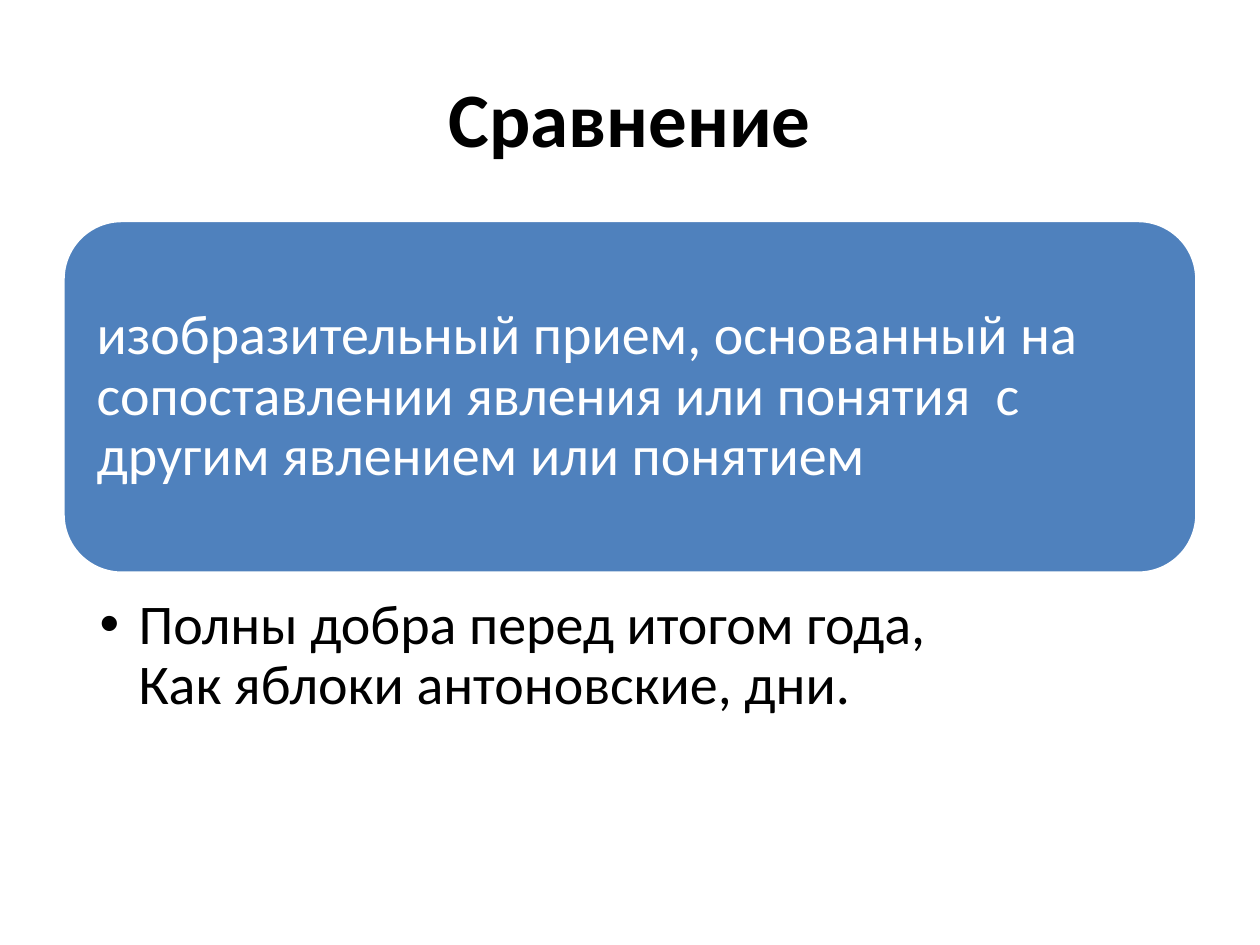
from dataclasses import dataclass

from lxml import etree
from pptx import Presentation
from pptx.dml.color import RGBColor
from pptx.enum.shapes import MSO_SHAPE
from pptx.enum.text import MSO_ANCHOR, PP_ALIGN
from pptx.oxml.ns import qn
from pptx.util import Inches, Pt

BLACK = RGBColor(0x00, 0x00, 0x00)
WHITE = RGBColor(0xFF, 0xFF, 0xFF)
BLUE = RGBColor(0x4F, 0x81, 0xBD)
FONT = "Calibri"
ROUNDED = MSO_SHAPE.ROUNDED_RECTANGLE
MIDDLE, TOP = MSO_ANCHOR.MIDDLE, MSO_ANCHOR.TOP
LEFT, CENTER = PP_ALIGN.LEFT, PP_ALIGN.CENTER

MARGIN, CONTENT_WIDTH = 0.5, 9
BULLET_INDENT = 0.31


@dataclass(frozen=True)
class TextStyle:
    size: int
    color: RGBColor
    bold: bool = False
    align: PP_ALIGN = LEFT
    anchor: MSO_ANCHOR = TOP
    line_spacing: float = 0.9
    insets: tuple[float, float, float, float] = (0.1, 0.05, 0.1, 0.05)


TITLE = TextStyle(44, BLACK, bold=True, align=CENTER, anchor=MIDDLE, line_spacing=1.0)
DEFINITION = TextStyle(32, WHITE, anchor=MIDDLE, insets=(0.13, 0.13, 0.13, 0.13))
EXAMPLE = TextStyle(32, BLACK, insets=(0.29, 0.04, 0.25, 0.04))


def place(shape, top: float, height: float) -> None:
    shape.left, shape.top = Inches(MARGIN), Inches(top)
    shape.width, shape.height = Inches(CONTENT_WIDTH), Inches(height)


def write(frame, lines: list[str], style: TextStyle):
    """Fill the frame with one paragraph, breaking it between the lines."""
    frame.word_wrap = True
    frame.vertical_anchor = style.anchor
    (frame.margin_left, frame.margin_top,
     frame.margin_right, frame.margin_bottom) = map(Inches, style.insets)
    para = frame.paragraphs[0]
    para.alignment = style.align
    para.line_spacing = style.line_spacing
    for index, line in enumerate(lines):
        if index:
            para.add_line_break()
        span = para.add_run()
        span.text = line
        span.font.name = FONT
        span.font.size = Pt(style.size)
        span.font.bold = style.bold
        span.font.color.rgb = style.color
    return para


def add_bullet(para) -> None:
    properties = para._p.get_or_add_pPr()
    properties.set("marL", str(Inches(BULLET_INDENT)))
    properties.set("indent", str(-Inches(BULLET_INDENT)))
    etree.SubElement(properties, qn("a:buFont"), typeface="Arial")
    etree.SubElement(properties, qn("a:buChar"), char="•")


def main() -> None:
    deck = Presentation()
    deck.slide_width, deck.slide_height = Inches(10), Inches(7.5)
    page = deck.slides.add_slide(deck.slide_layouts[5])

    title = page.shapes.title
    place(title, 0.3, 1.25)
    write(title.text_frame, ["Сравнение"], TITLE)

    card = page.shapes.add_shape(ROUNDED, 0, 0, 0, 0)
    place(card, 1.75, 2.8)
    card.shadow.inherit = False
    card.fill.solid()
    card.fill.fore_color.rgb = BLUE
    card.line.color.rgb = WHITE
    card.line.width = Pt(2)
    write(card.text_frame, [
        "изобразительный прием, основанный на сопоставлении явления "
        "или понятия  с другим явлением или понятием",
    ], DEFINITION)

    example = page.shapes.add_textbox(0, 0, 0, 0)
    place(example, 4.69, 1.62)
    add_bullet(write(example.text_frame, [
        "Полны добра перед итогом года,",
        "Как яблоки антоновские, дни.",
    ], EXAMPLE))

    deck.save("out.pptx")


if __name__ == "__main__":
    main()
